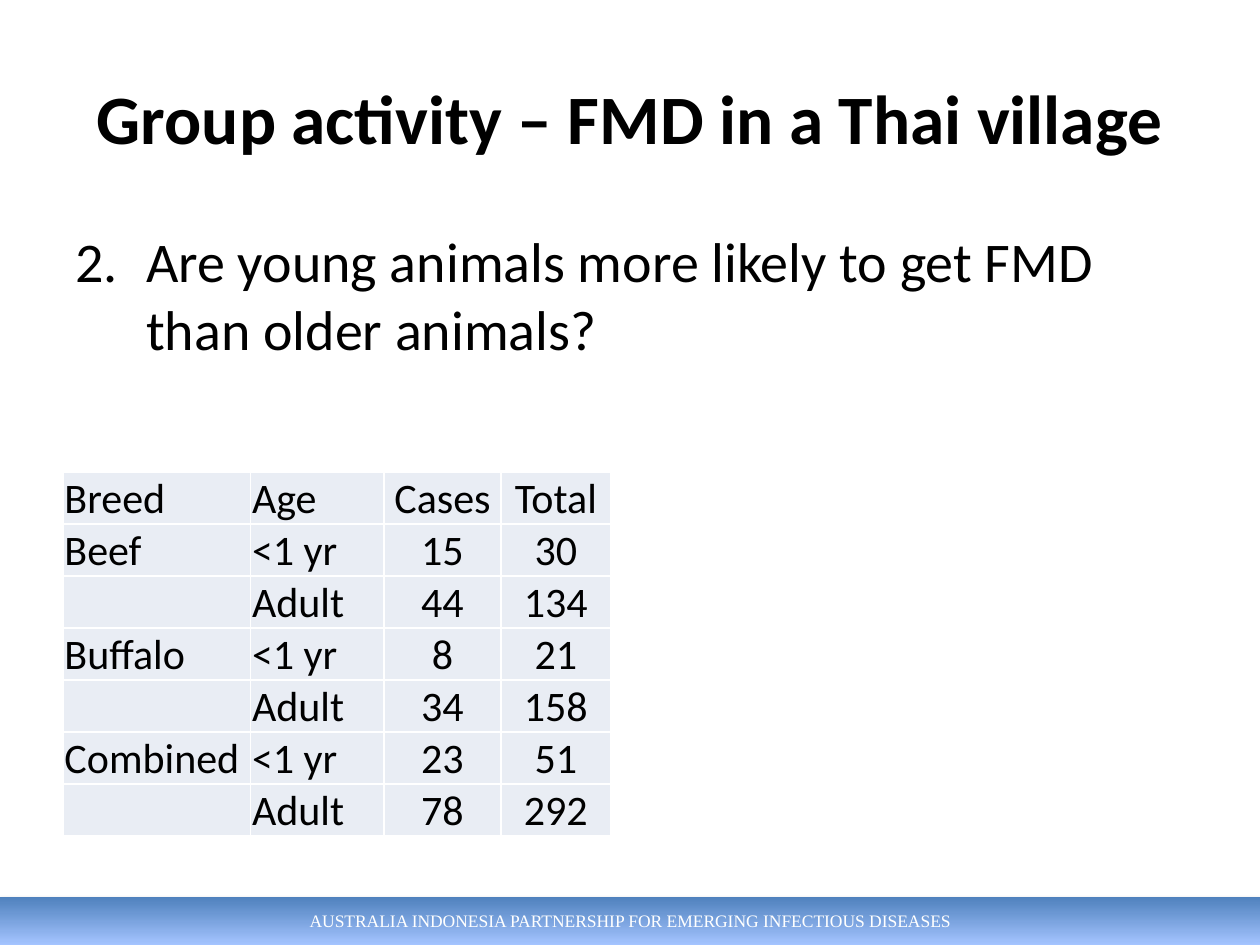
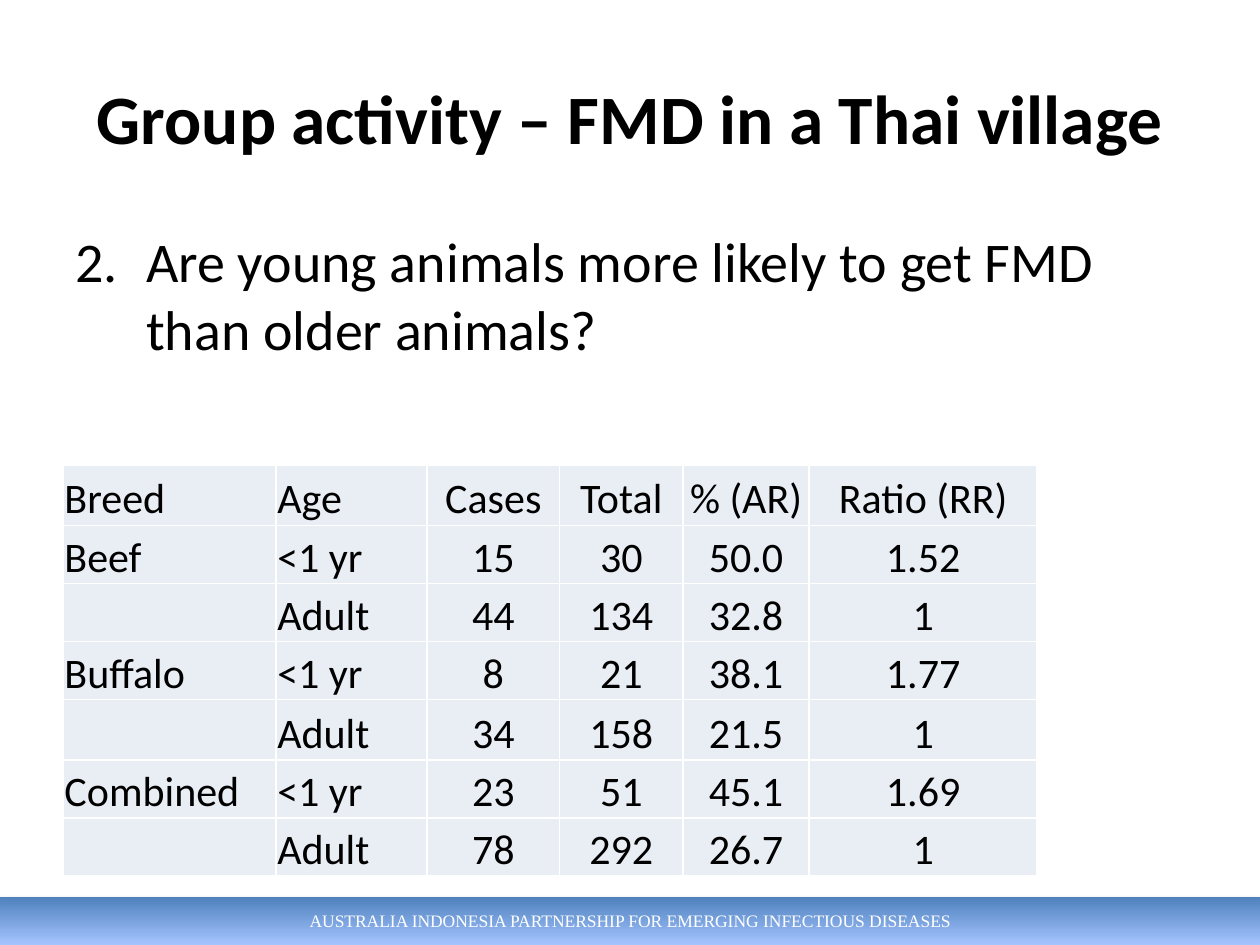
from dataclasses import dataclass

from lxml.etree import SubElement
from pptx import Presentation
from pptx.dml.color import RGBColor
from pptx.enum.shapes import MSO_SHAPE
from pptx.enum.text import MSO_ANCHOR, PP_ALIGN
from pptx.oxml.ns import qn
from pptx.slide import Slide
from pptx.text.text import TextFrame
from pptx.util import Cm, Pt

BLACK, WHITE, CELL = "000000", "FFFFFF", "E9EDF4"
BAND_TOP, BAND_BOTTOM = "4F81BD", "A4C4FF"
BODY_FONT, BAND_FONT = "Calibri", "Times New Roman"
LEFT, WIDTH = 1.27, 22.86
TITLE = "Group activity – FMD in a Thai village"
QUESTION = "Are young animals more likely to get FMD than older animals?"
BAND_TEXT = "AUSTRALIA INDONESIA PARTNERSHIP FOR EMERGING INFECTIOUS DISEASES"
FMD_ROWS = [
    ("Breed", "Age", "Cases", "Total", "% (AR)", "Ratio (RR)"),
    ("Beef", "<1 yr", "15", "30", "50.0", "1.52"),
    ("", "Adult", "44", "134", "32.8", "1"),
    ("Buffalo", "<1 yr", "8", "21", "38.1", "1.77"),
    ("", "Adult", "34", "158", "21.5", "1"),
    ("Combined", "<1 yr", "23", "51", "45.1", "1.69"),
    ("", "Adult", "78", "292", "26.7", "1"),
]
TALL_ROWS = (0, 4)


@dataclass
class FmdTable:
    """Placement of one table, in centimetres."""
    top: float
    col_widths: tuple[float, ...]
    row_height: float
    tall_height: float
    question_height: float


TABLES = [
    FmdTable(9.52, (3.78, 2.69, 2.36, 2.21), 0.97, 1.02, 3.68),
    FmdTable(9.37, (4.29, 3.05, 2.67, 2.49, 2.54, 4.6), 1.17, 1.22, 3.48),
]


def rgb(color: str) -> RGBColor:
    """Turn a hex string into a colour."""
    return RGBColor.from_string(color)


def write(tf: TextFrame, text: str, *, size: float, font: str = BODY_FONT,
          color: str = BLACK, bold: bool = False,
          align: PP_ALIGN = PP_ALIGN.LEFT, number: int = 0) -> None:
    """Fill a text frame with one formatted, optionally numbered paragraph."""
    tf.word_wrap = True
    p = tf.paragraphs[0]
    p.alignment = align
    if number:
        pPr = p._p.get_or_add_pPr()
        pPr.set("marL", str(Cm(1.43)))
        pPr.set("indent", str(-Cm(1.43)))
        SubElement(pPr, qn("a:buFont"), typeface="+mj-lt")
        SubElement(pPr, qn("a:buAutoNum"), type="arabicPeriod", startAt=str(number))
    r = p.add_run()
    r.text = text
    r.font.size, r.font.name, r.font.bold = Pt(size), font, bold
    r.font.color.rgb = rgb(color)


def add_text(s: Slide, top: float, height: float, text: str,
             anchor: MSO_ANCHOR = MSO_ANCHOR.TOP, **style) -> None:
    """Add a text box across the content width."""
    tf = s.shapes.add_textbox(Cm(LEFT), Cm(top), Cm(WIDTH), Cm(height)).text_frame
    tf.vertical_anchor = anchor
    write(tf, text, **style)


def add_band(s: Slide) -> None:
    """Add the gradient footer band with its shadow."""
    sp = s.shapes.add_shape(MSO_SHAPE.RECTANGLE, 0, Cm(18.08), Cm(25.4), Cm(0.97))
    sp.line.fill.background()
    sp.fill.gradient()
    sp.fill.gradient_angle = 270
    for stop, position, color in zip(sp.fill.gradient_stops, (0, 1), (BAND_TOP, BAND_BOTTOM)):
        stop.position, stop.color.rgb = position, rgb(color)
    sp.shadow.inherit = False
    effects = sp._element.spPr.find(qn("a:effectLst"))
    shadow = SubElement(effects, qn("a:outerShdw"), blurRad=str(Pt(3.1)),
                        dist=str(Pt(1.8)), dir="5400000", rotWithShape="0")
    shade = SubElement(shadow, qn("a:srgbClr"), val=BLACK)
    SubElement(shade, qn("a:alpha"), val="35000")
    sp.text_frame.vertical_anchor = MSO_ANCHOR.MIDDLE
    write(sp.text_frame, BAND_TEXT, size=10, font=BAND_FONT, color=WHITE,
          align=PP_ALIGN.CENTER)


def format_cell(cell) -> None:
    """Set borders, fill, insets and anchor of a table cell."""
    tcPr = cell._tc.get_or_add_tcPr()
    for side in ("L", "R", "T", "B"):
        ln = SubElement(tcPr, qn(f"a:ln{side}"), w=str(Pt(1)))
        SubElement(SubElement(ln, qn("a:solidFill")), qn("a:srgbClr"), val=WHITE)
    cell.fill.solid()
    cell.fill.fore_color.rgb = rgb(CELL)
    cell.margin_left = cell.margin_right = cell.margin_top = Cm(0.03)
    cell.margin_bottom = 0
    cell.vertical_anchor = MSO_ANCHOR.BOTTOM


def add_fmd_table(s: Slide, spec: FmdTable) -> None:
    """Add the case table, with as many columns as there are widths."""
    heights = [spec.tall_height if i in TALL_ROWS else spec.row_height
               for i in range(len(FMD_ROWS))]
    table = s.shapes.add_table(len(heights), len(spec.col_widths), Cm(LEFT), Cm(spec.top),
                               Cm(sum(spec.col_widths)), Cm(sum(heights))).table
    table.first_row = table.horz_banding = False
    for col, width in zip(table.columns, spec.col_widths):
        col.width = Cm(width)
    for row, height, values in zip(table.rows, heights, FMD_ROWS):
        row.height = Cm(height)
        for i, (cell, value) in enumerate(zip(row.cells, values)):
            format_cell(cell)
            if value:
                write(cell.text_frame, value, size=24,
                      align=PP_ALIGN.LEFT if i < 2 else PP_ALIGN.CENTER)


def main() -> None:
    """Build and save the slides."""
    prs = Presentation()
    prs.slide_width, prs.slide_height = Cm(25.4), Cm(19.05)
    for spec in TABLES:
        s = prs.slides.add_slide(prs.slide_layouts[6])
        add_band(s)
        add_text(s, 0.76, 3.18, TITLE, MSO_ANCHOR.MIDDLE, size=39.6, bold=True,
                 align=PP_ALIGN.CENTER)
        add_text(s, 4.45, spec.question_height, QUESTION, size=32, number=2)
        add_fmd_table(s, spec)
    prs.save("out.pptx")


if __name__ == "__main__":
    main()
